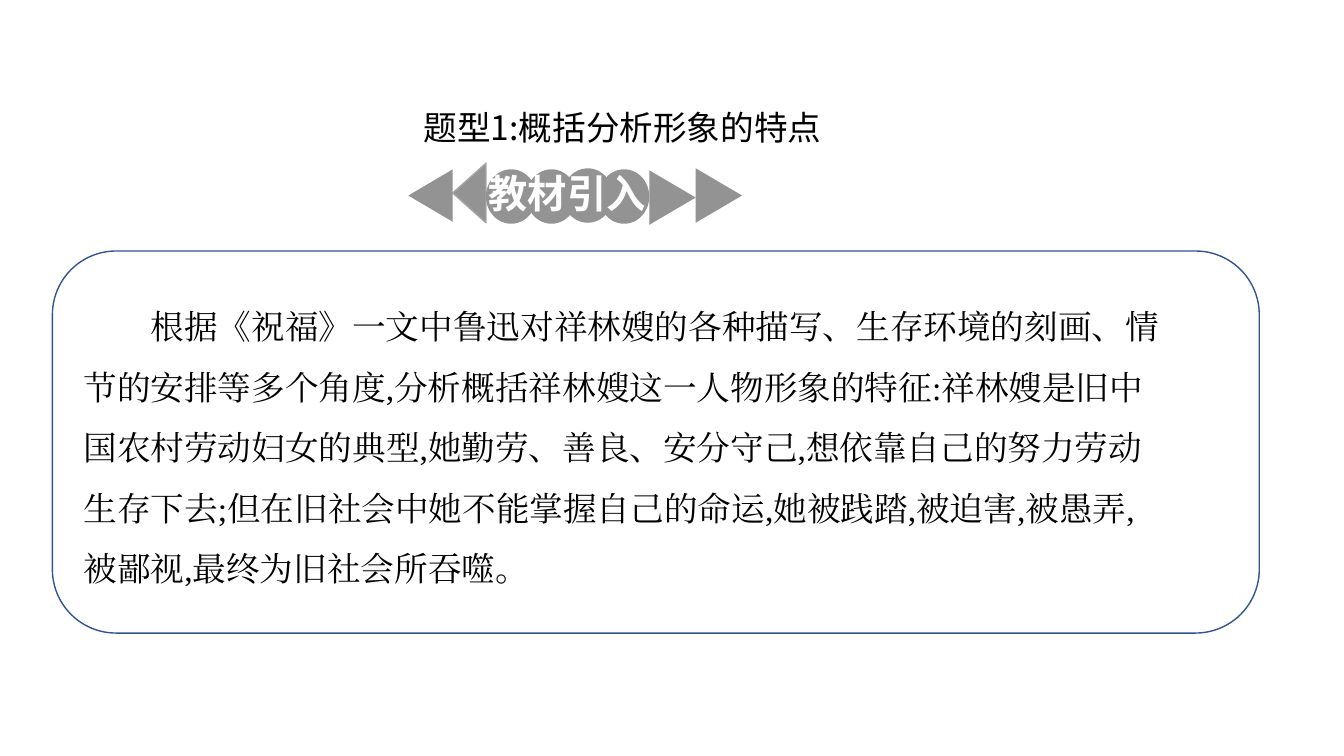
from lxml.etree import SubElement
from pptx import Presentation
from pptx.dml.color import RGBColor
from pptx.enum.shapes import MSO_SHAPE
from pptx.enum.text import MSO_ANCHOR, MSO_AUTO_SIZE, PP_ALIGN
from pptx.oxml.ns import qn
from pptx.util import Inches, Pt

BLACK = RGBColor(0x00, 0x00, 0x00)
WHITE = RGBColor(0xFF, 0xFF, 0xFF)
GRAY = RGBColor(0x93, 0x93, 0x93)
LIGHT_GRAY = RGBColor(0xA5, 0xA5, 0xA5)
BLUE = RGBColor(0x32, 0x54, 0x91)
SANS = "Noto Sans CJK SC"
SERIF = "Times New Roman"

HEADING = "题型1:概括分析形象的特点"
BADGE = "教材引入"
PASSAGE = (
    "根据《祝福》一文中鲁迅对祥林嫂的各种描写、生存环境的刻画、情节的安排等多个角度,"
    "分析概括祥林嫂这一人物形象的特征:祥林嫂是旧中国农村劳动妇女的典型,"
    "她勤劳、善良、安分守己,想依靠自己的努力劳动生存下去;"
    "但在旧社会中她不能掌握自己的命运,她被践踏,被迫害,被愚弄,被鄙视,"
    "最终为旧社会所吞噬。"
)


def place(shape, left, top, width, height):
    shape.left, shape.top = Inches(left), Inches(top)
    shape.width, shape.height = Inches(width), Inches(height)


def write_text(shape, text, size=24, font=SANS, color=BLACK, bold=False,
               align=PP_ALIGN.LEFT, line_spacing=1.0, first_indent=0):
    frame = shape.text_frame
    frame.word_wrap = True
    frame.auto_size = MSO_AUTO_SIZE.NONE
    frame.vertical_anchor = MSO_ANCHOR.TOP
    paragraph = frame.paragraphs[0]
    paragraph.alignment = align
    paragraph.line_spacing = line_spacing
    paragraph.space_before = Pt(0)
    if first_indent:
        properties = paragraph._p.get_or_add_pPr()
        properties.set("marL", "0")
        properties.set("indent", str(Pt(first_indent)))
    run = paragraph.add_run()
    run.text = text
    run.font.size = Pt(size)
    run.font.bold = bold
    run.font.color.rgb = color
    run.font.name = font
    SubElement(run.font._element, qn("a:ea"), typeface=font)


def add_text(slide, box, text, **text_format):
    text_box = slide.shapes.add_textbox(*map(Inches, box))
    write_text(text_box, text, **text_format)


def add_shape(slide, kind, box, fill=None, line=None, rotation=0):
    shape = slide.shapes.add_shape(kind, *map(Inches, box))
    shape.shadow.inherit = False
    shape.rotation = rotation
    if fill is None:
        shape.fill.background()
    else:
        shape.fill.solid()
        shape.fill.fore_color.rgb = fill
    if line is None:
        shape.line.fill.background()
    else:
        shape.line.color.rgb = line
        shape.line.width = Pt(1)


def add_heading(slide, left, top, width, height):
    title = slide.shapes.title
    place(title, left, top, width, height)
    write_text(title, HEADING, align=PP_ALIGN.CENTER)


def add_badge(slide, left, top):
    """Four discs under the label, with two triangles pointing out on each side."""
    triangle = MSO_SHAPE.FLOWCHART_EXTRACT
    add_shape(slide, triangle, (left + 0.35, top + 0.12, 0.59, 0.33),
              GRAY, LIGHT_GRAY, rotation=270)
    for disc_left, disc_top in ((0.81, 0.05), (1.21, 0.05), (1.57, 0.04), (1.93, 0.05)):
        add_shape(slide, MSO_SHAPE.OVAL, (left + disc_left, top + disc_top, 0.5, 0.54), GRAY)
    add_text(slide, (left + 0.74, top, 1.8, 0.57), BADGE, size=28, color=WHITE, bold=True)
    add_shape(slide, triangle, (left, top + 0.09, 0.52, 0.44), GRAY, rotation=270)
    for triangle_left, triangle_top in ((2.39, 0.1), (2.85, 0.08)):
        add_shape(slide, triangle, (left + triangle_left, top + triangle_top, 0.54, 0.46),
                  GRAY, rotation=90)


def add_passage(slide, left, top, width, height):
    add_text(slide, (left + 0.21, top + 0.3, width - 1.05, 2.07), PASSAGE,
             font=SERIF, line_spacing=1.5, first_indent=48)
    add_shape(slide, MSO_SHAPE.ROUNDED_RECTANGLE, (left, top, width, height), line=BLUE)


def main():
    presentation = Presentation()
    presentation.slide_width = Inches(13.33)
    presentation.slide_height = Inches(7.5)
    slide = presentation.slides.add_slide(presentation.slide_layouts[5])
    add_heading(slide, 2.91, 1.01, 6.53, 0.5)
    add_badge(slide, 4.01, 1.63)
    add_passage(slide, 0.52, 2.49, 11.97, 3.79)
    presentation.save("out.pptx")


if __name__ == "__main__":
    main()
